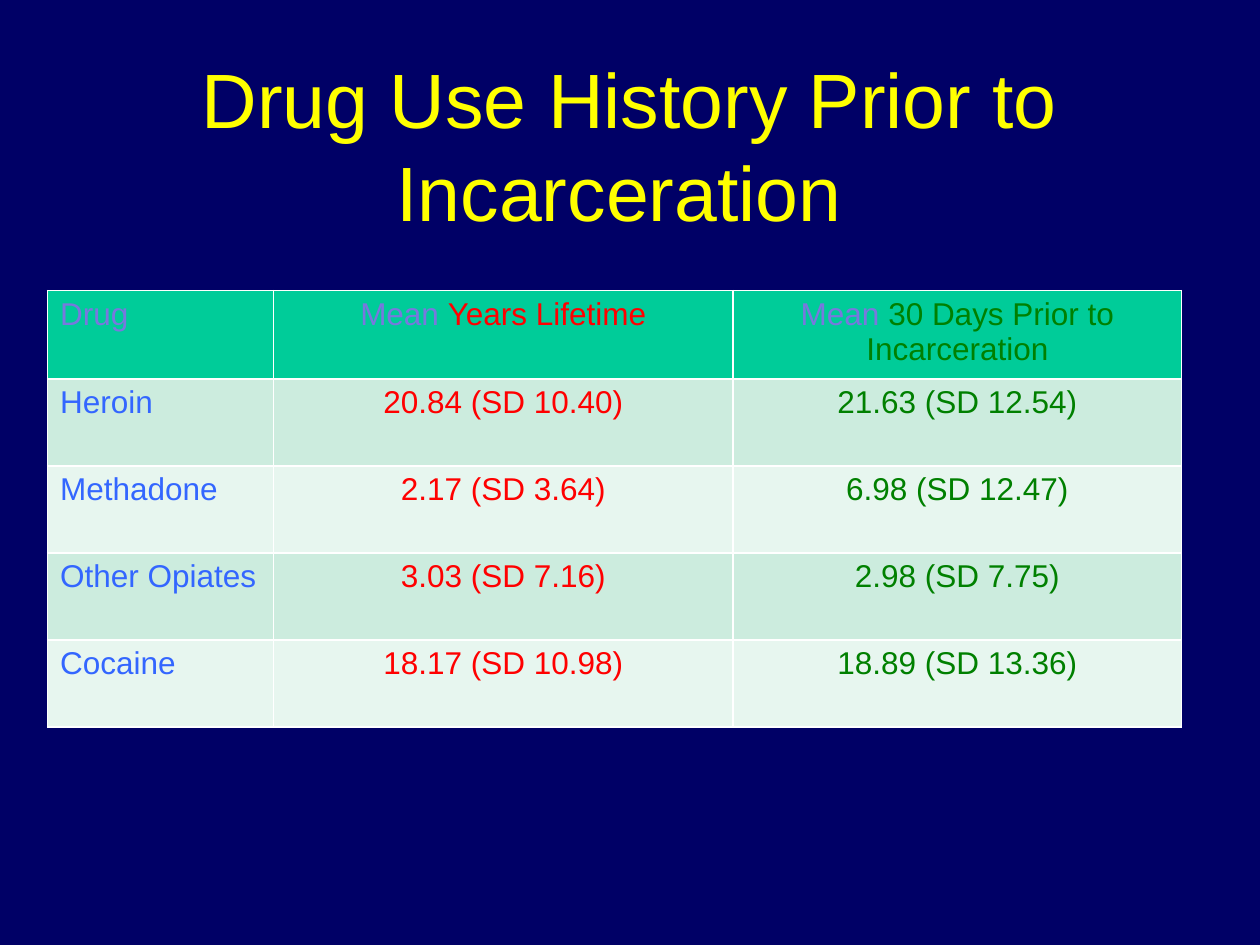
from lxml.etree import SubElement
from pptx import Presentation
from pptx.dml.color import RGBColor
from pptx.enum.text import MSO_ANCHOR, PP_ALIGN
from pptx.oxml.ns import qn
from pptx.util import Cm, Pt

VIOLET, BLUE, RED, GREEN = "7878DE", "3366FF", "FF0000", "008000"
HEAD = [
    [[("Drug", VIOLET)]],
    [[("Mean ", VIOLET), ("Years Lifetime", RED)]],
    [[("Mean ", VIOLET), ("30 Days Prior to", GREEN)], [("Incarceration", GREEN)]],
]
DRUGS = [
    ("Heroin", "20.84 (SD 10.40)", "21.63 (SD 12.54)"),
    ("Methadone", "2.17 (SD 3.64)", "6.98 (SD 12.47)"),
    ("Other Opiates", "3.03 (SD 7.16)", "2.98 (SD 7.75)"),
    ("Cocaine", "18.17 (SD 10.98)", "18.89 (SD 13.36)"),
]
WIDTHS = (4.55, 9.27, 9.04)
HEIGHT = 1.755


def paint(color, code):
    """Set a colour format from a hex string."""
    color.rgb = RGBColor.from_string(code)


def style(run, size, code):
    """Give a run its font, size and colour."""
    run.font.name = "Arial"
    run.font.size = Pt(size)
    run.font.bold = False
    paint(run.font.color, code)


def add_title(slide, text):
    """Add the centred title."""
    box = slide.shapes.add_textbox(Cm(1.27), Cm(1.32), Cm(22.86), Cm(3.18))
    frame = box.text_frame
    frame.word_wrap = True
    frame.vertical_anchor = MSO_ANCHOR.MIDDLE
    frame.text = text
    line = frame.paragraphs[0]
    line.alignment = PP_ALIGN.CENTER
    style(line.runs[0], 44, "FFFF00")


def edge(cell, code):
    """Draw a one-point border on all sides of a cell."""
    props = cell._tc.get_or_add_tcPr()
    for side in ("a:lnL", "a:lnR", "a:lnT", "a:lnB"):
        line = SubElement(props, qn(side), w=str(Pt(1)))
        fill = SubElement(line, qn("a:solidFill"))
        SubElement(fill, qn("a:srgbClr"), val=code)


def fill_cell(cell, lines, back, align):
    """Write lines of coloured runs into a bordered, filled cell."""
    edge(cell, "FFFFFF")
    cell.fill.solid()
    paint(cell.fill.fore_color, back)
    frame = cell.text_frame
    for index, parts in enumerate(lines):
        line = frame.add_paragraph() if index else frame.paragraphs[0]
        line.alignment = align
        for text, code in parts:
            run = line.add_run()
            run.text = text
            style(run, 18, code)


def add_grid(slide):
    """Add the drug use table."""
    body = [[[[pair]] for pair in zip(row, (BLUE, RED, GREEN))] for row in DRUGS]
    rows = [HEAD] + body
    table = slide.shapes.add_table(
        len(rows), len(WIDTHS), Cm(0.96), Cm(5.86),
        Cm(sum(WIDTHS)), Cm(HEIGHT * len(rows))).table
    for column, width in zip(table.columns, WIDTHS):
        column.width = Cm(width)
    for r, row in enumerate(rows):
        table.rows[r].height = Cm(HEIGHT)
        back = ("E7F6EF", "CCECDE")[r % 2] if r else "00CC99"
        for c, lines in enumerate(row):
            align = PP_ALIGN.CENTER if c else PP_ALIGN.LEFT
            fill_cell(table.cell(r, c), lines, back, align)


def main():
    """Build and save the slide."""
    deck = Presentation()
    deck.slide_width, deck.slide_height = Cm(25.4), Cm(19.05)
    slide = deck.slides.add_slide(deck.slide_layouts[6])
    slide.background.fill.solid()
    paint(slide.background.fill.fore_color, "000066")
    add_title(slide, "Drug Use History Prior to Incarceration ")
    add_grid(slide)
    deck.save("out.pptx")


if __name__ == "__main__":
    main()
